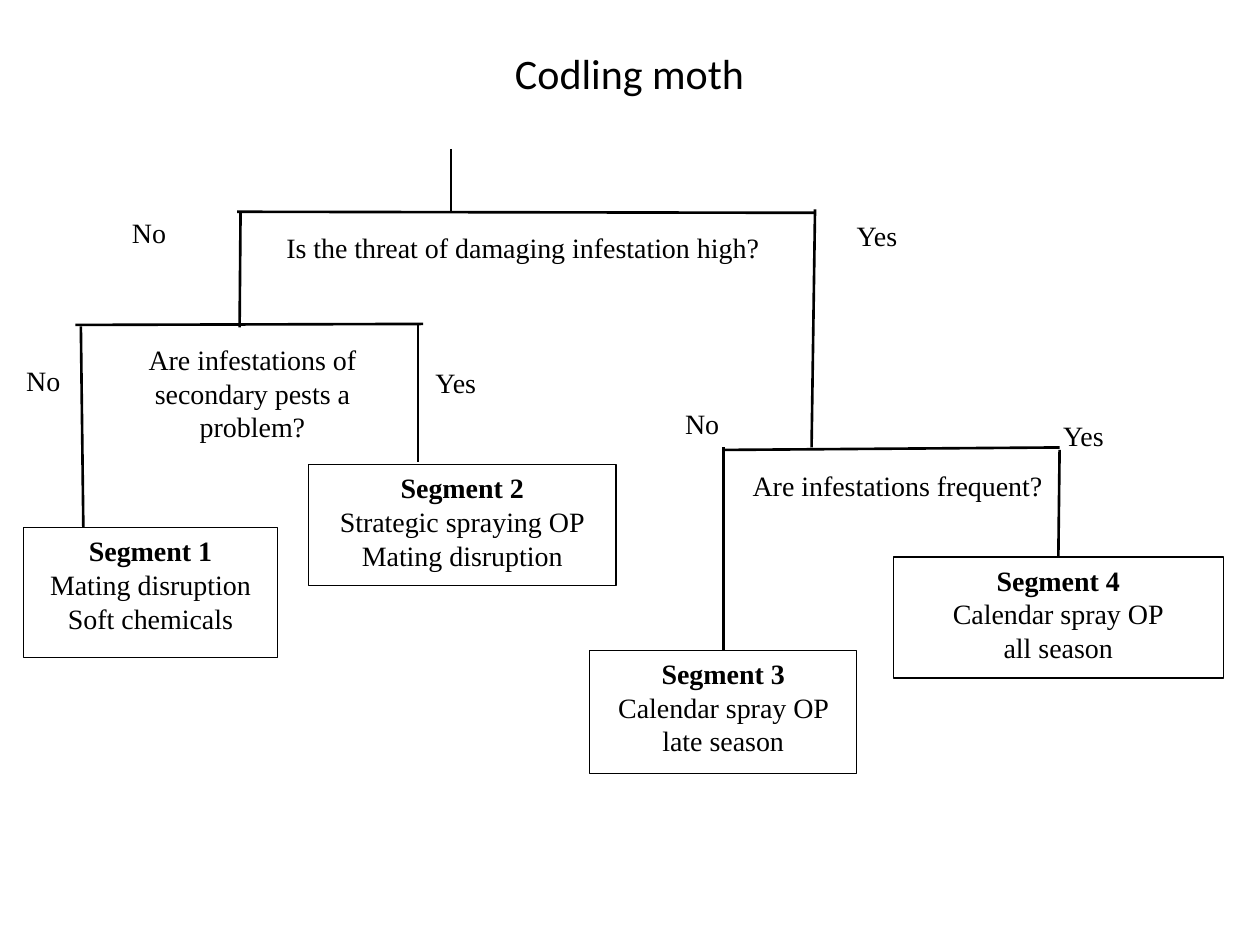
from pptx import Presentation
from pptx.dml.color import RGBColor
from pptx.enum.shapes import MSO_CONNECTOR as Link, MSO_SHAPE as Shape
from pptx.enum.text import MSO_ANCHOR as Anchor, PP_ALIGN as Align
from pptx.util import Cm, Pt
from lxml.etree import SubElement
from pptx.oxml.ns import qn


def color(value):
    return RGBColor.from_string(value)


def add_text(left, top, width, height, lines, align=Align.CENTER, size=16, font="Times New Roman"):
    block = slide.shapes.add_shape(Shape.RECTANGLE, Cm(left), Cm(top), Cm(width), Cm(height))
    block.shadow.inherit = False
    block.fill.solid()
    block.fill.fore_color.rgb = color("FFFFFF")
    block.line.fill.background()
    frame = block.text_frame
    frame.word_wrap = True
    frame.vertical_anchor = Anchor.TOP
    frame.text = "\n".join(lines)
    for paragraph in frame.paragraphs:
        paragraph.alignment = align
        paragraph.font.name = font
        paragraph.font.size = Pt(size)
        paragraph.font.color.rgb = color("000000")
    return block


prs = Presentation()
prs.slide_width, prs.slide_height = Cm(25.4), Cm(19.05)
slide = prs.slides.add_slide(prs.slide_layouts[6])

title = add_text(0.89, 0.56, 23.6, 1.83, ["Codling moth"], size=24, font="Calibri")
title.text_frame.vertical_anchor = Anchor.MIDDLE

questions = [
    (5.31, 4.52, 10.46, 0.81, "Is the threat of damaging infestation high?"),
    (1.93, 6.78, 6.32, 1.57, "Are infestations of secondary pests a problem?"),
    (14.88, 9.32, 6.43, 1.57, "Are infestations frequent?"),
]
for left, top, width, height, question in questions:
    add_text(left, top, width, height, [question])

answers = [
    (2.41, 4.22, "No"), (17.02, 4.29, "Yes"),
    (0.28, 7.21, "No"), (8.53, 7.24, "Yes"),
    (13.56, 8.08, "No"), (21.18, 8.31, "Yes"),
]
for left, top, answer in answers:
    add_text(left, top, 1.27 if answer == "No" else 1.65, 0.97, [answer], Align.LEFT)

segments = [
    (0.48, 10.64, 5.11, 2.62, ["Mating disruption", "Soft chemicals"]),
    (6.22, 9.37, 6.2, 2.44, ["Strategic spraying OP", "Mating disruption"]),
    (11.89, 13.11, 5.38, 2.49, ["Calendar spray OP late season"]),
    (18.01, 11.23, 6.65, 2.44, ["Calendar spray OP", "all season"]),
]
segment_boxes = []
for number, (left, top, width, height, treatment) in enumerate(segments, 1):
    segment = add_text(left, top, width, height, [f"Segment {number}"] + treatment)
    segment.line.color.rgb = color("000000")
    segment.line.width = Pt(0.75)
    segment.text_frame.paragraphs[0].font.bold = True
    segment_boxes.append(segment)

branches = [
    (9.09, 3, 9.09, 4.29, None),
    (4.78, 4.27, 16.43, 4.29, None),
    (4.85, 4.29, 4.83, 6.6, None),
    (16.43, 4.22, 16.36, 9.02, None),
    (1.52, 6.55, 8.53, 6.53, None),
    (1.63, 6.58, 1.68, 10.64, None),
    (8.43, 6.53, 8.43, 9.32, None),
    (14.58, 9.07, 21.36, 9.02, None),
    (14.58, 9.02, 14.58, 13.11, segment_boxes[2]),
    (21.36, 9.07, 21.34, 11.23, segment_boxes[3]),
]
for x1, y1, x2, y2, segment in branches:
    branch = slide.shapes.add_connector(Link.STRAIGHT, Cm(x1), Cm(y1), Cm(x2), Cm(y2))
    branch.line.color.rgb = color("000000")
    branch.line.width = Pt(1.5)
    SubElement(branch._element.spPr, qn("a:effectLst"))
    if segment is not None:
        branch.end_connect(segment, 0)

prs.save("out.pptx")
